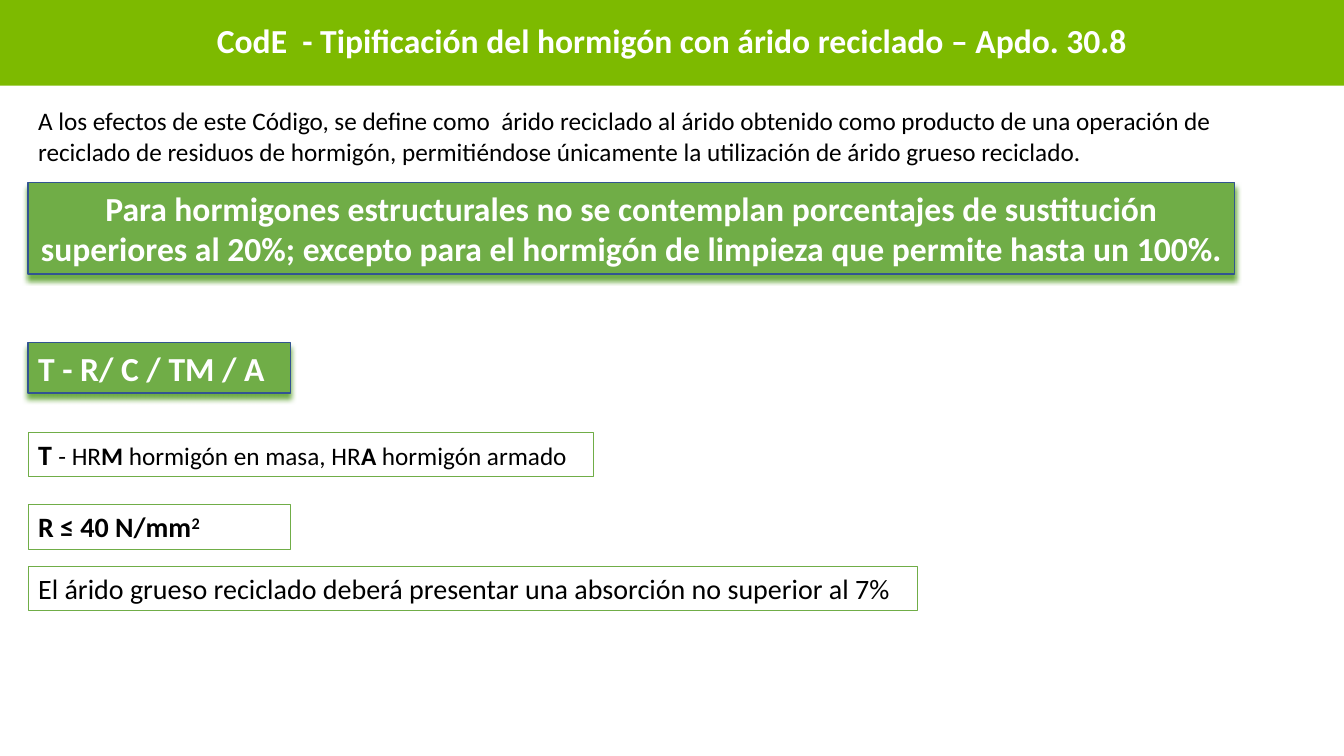
from lxml import etree
from pptx import Presentation
from pptx.dml.color import RGBColor
from pptx.enum.shapes import MSO_SHAPE
from pptx.enum.text import MSO_ANCHOR, MSO_AUTO_SIZE, PP_ALIGN
from pptx.oxml.ns import qn
from pptx.util import Pt

RECT = MSO_SHAPE.RECTANGLE
TOP, MIDDLE = MSO_ANCHOR.TOP, MSO_ANCHOR.MIDDLE
LEFT, CENTER = PP_ALIGN.LEFT, PP_ALIGN.CENTER
FIXED = MSO_AUTO_SIZE.NONE

LIME, GREEN, BLUE = "7DBA00", "70AD47", "325491"
WHITE, BLACK = "FFFFFF", "000000"
WIDE, HIGH, EDGE = 960, 540, 20.16

TITLE = [("CodE  - Tipificación del hormigón con árido reciclado – Apdo. 30.8", 24, True, 0)]
INTRO = [("A los efectos de este Código, se define como  árido reciclado al árido obtenido "
          "como producto de una operación de reciclado de residuos de hormigón, "
          "permitiéndose únicamente la utilización de árido grueso reciclado.", 18, False, 0)]
BANDS = [
    (130.32, 861.84, 65.52, CENTER,
     [("Para hormigones estructurales no se contemplan porcentajes de sustitución "
       "superiores al 20%; excepto para el hormigón de limpieza que permite hasta un 100%.",
       24, True, 0)]),
    (244.8, 187.2, 36, LEFT, [("T - R/ C / TM / A", 24, True, 0)]),
]
NOTES = [
    (308.88, 403.92, [
        ("T ", 20, True, 0), ("- HR", 18, False, 0), ("M", 18, True, 0),
        (" hormigón en masa, HR", 18, False, 0), ("A", 18, True, 0),
        (" hormigón armado", 18, False, 0)]),
    (360.72, 187.2, [("R ≤ 40 N/mm", 20, True, 0), ("2", 20, True, 30)]),
    (404.64, 635.04, [
        ("El árido grueso reciclado deberá presentar una absorción no superior al 7%",
         20, False, 0)]),
]


def rgb(code):
    return RGBColor.from_string(code)


def write(shape, runs, color, align=LEFT, anchor=TOP):
    frame = shape.text_frame
    frame.word_wrap = True
    frame.auto_size = FIXED
    frame.vertical_anchor = anchor
    para = frame.paragraphs[0]
    para.alignment = align
    for text, size, bold, base in runs:
        run = para.add_run()
        run.text = text
        font = run.font
        font.name, font.size, font.bold = "Calibri", Pt(size), bold
        font.color.rgb = rgb(color)
        if base:
            font._element.set("baseline", str(base * 1000))
    return para


def box(top, width, height, line, weight, fill=None):
    shape = slide.shapes.add_shape(RECT, Pt(EDGE), Pt(top), Pt(width), Pt(height))
    shape.shadow.inherit = False
    shape.line.color.rgb = rgb(line)
    shape.line.width = Pt(weight)
    if fill:
        shape.fill.solid()
        shape.fill.fore_color.rgb = rgb(fill)
    else:
        shape.fill.background()
    return shape


def shade(shape):
    effect = shape.element.spPr.find(qn("a:effectLst"))
    outer = etree.SubElement(effect, qn("a:outerShdw"), blurRad=str(Pt(4)),
                             dist=str(Pt(4)), dir="5400000", rotWithShape="0")
    etree.SubElement(outer, qn("a:srgbClr"), val=GREEN)


deck = Presentation()
deck.slide_width, deck.slide_height = Pt(WIDE), Pt(HIGH)
slide = deck.slides.add_slide(deck.slide_layouts[5])

title = slide.shapes.title
title.left, title.top, title.width, title.height = Pt(0), Pt(0), Pt(WIDE), Pt(61.2)
title.fill.solid()
title.fill.fore_color.rgb = rgb(LIME)
write(title, TITLE, WHITE, CENTER, MIDDLE).line_spacing = 0.9

intro = slide.shapes.add_textbox(Pt(EDGE), Pt(72), Pt(861.84), Pt(51.12))
write(intro, INTRO, BLACK)

for top, width, height, align, runs in BANDS:
    band = box(top, width, height, BLUE, 1, GREEN)
    shade(band)
    write(band, runs, WHITE, align, MIDDLE)

for top, width, runs in NOTES:
    write(box(top, width, 31.68, GREEN, 0.75), runs, BLACK)

deck.save("out.pptx")
